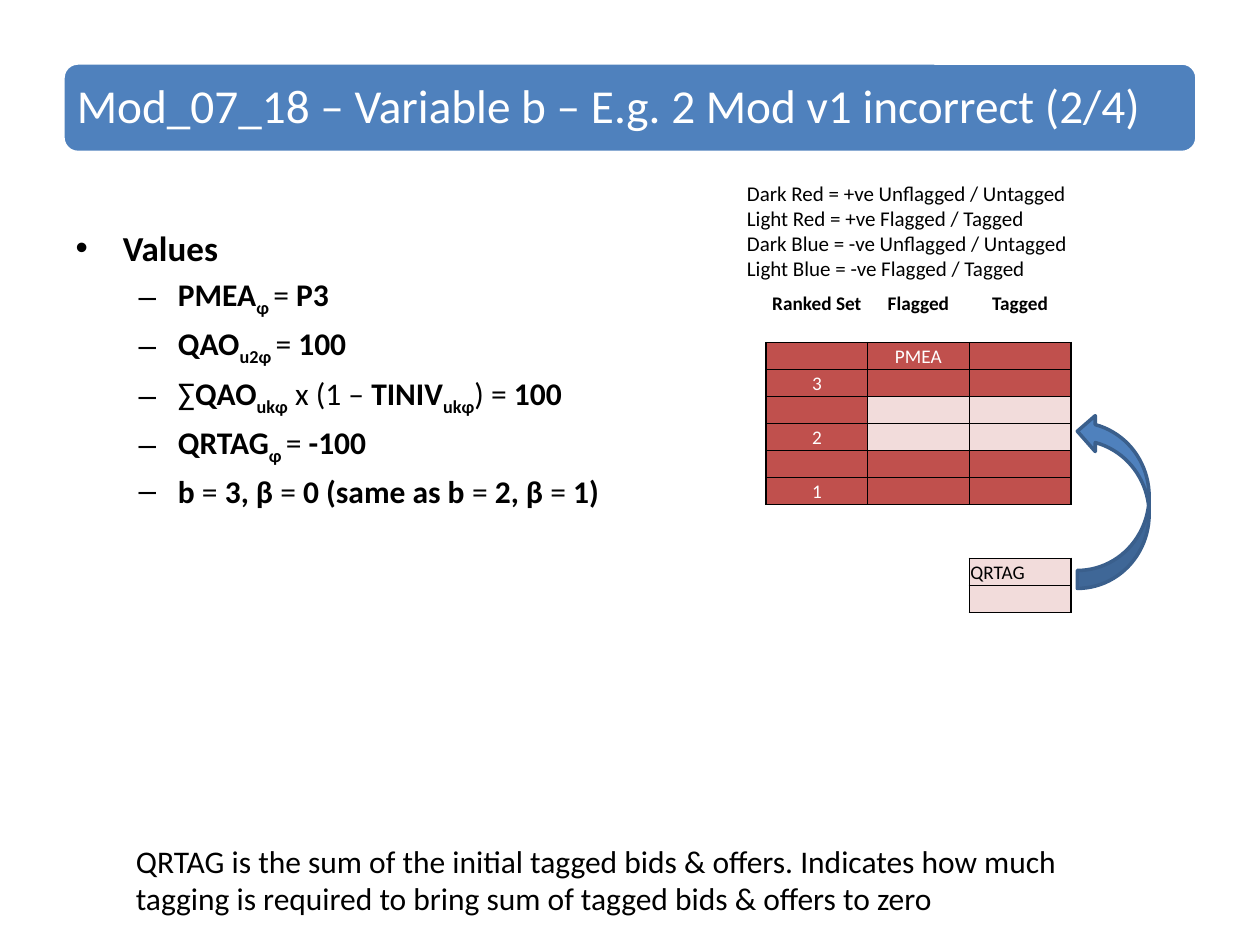
from lxml.etree import SubElement
from pptx import Presentation
from pptx.dml.color import RGBColor
from pptx.enum.shapes import MSO_SHAPE
from pptx.enum.text import MSO_ANCHOR, MSO_AUTO_SIZE, PP_ALIGN
from pptx.oxml.ns import qn
from pptx.util import Inches, Pt

FONT = "Calibri"
BLACK = RGBColor(0, 0, 0)
WHITE = RGBColor(0xFF, 0xFF, 0xFF)
BLUE = RGBColor(0x4F, 0x81, 0xBD)
DARK_BLUE = RGBColor(0x3A, 0x5F, 0x8C)
DARK_RED = RGBColor(0xC0, 0x50, 0x4D)
LIGHT_RED = RGBColor(0xF2, 0xDC, 0xDB)

NO_STYLE = "{2D5ABB26-0587-4C30-8999-92F81FD0307C}"
ROW_COUNT = 18
COLUMN_COUNT = 3
CELL_SIZE = 11

TITLE = "Mod_07_18 – Variable b – E.g. 2 Mod v1 incorrect (2/4)"
VALUES = [
    [("PMEA", "bold"), ("φ ", "sub"), ("= ", "plain"), ("P3", "bold")],
    [("QAO", "bold"), ("u2φ ", "sub"), ("= ", "plain"), ("100", "bold")],
    [("∑", "plain"), ("QAO", "bold"), ("ukφ", "sub"), (" x (1 – ", "plain"),
     ("TINIV", "bold"), ("ukφ", "sub"), (") = ", "plain"), ("100", "bold")],
    [("QRTAG", "bold"), ("φ ", "sub"), ("= ", "plain"), ("-100", "bold")],
    [("b ", "bold"), ("= ", "plain"), ("3, β ", "bold"), ("=", "plain"),
     (" 0 (same as b ", "bold"), ("= ", "plain"), ("2, β ", "bold"),
     ("=", "plain"), (" 1)", "bold")],
]
LEGEND = [
    "Dark Red = +ve Unflagged / Untagged",
    "Light Red = +ve Flagged / Tagged",
    "Dark Blue = -ve Unflagged / Untagged",
    "Light Blue = -ve Flagged / Tagged",
]
NOTE = ("QRTAG is the sum of the initial tagged bids & offers. Indicates how much "
        "tagging is required to bring sum of tagged bids & offers to zero")

BLOCKS = {
    (2, 0): DARK_RED, (2, 1): DARK_RED, (2, 2): DARK_RED,
    (4, 0): DARK_RED, (4, 1): LIGHT_RED, (4, 2): LIGHT_RED,
    (6, 0): DARK_RED, (6, 1): DARK_RED, (6, 2): DARK_RED,
    (10, 2): LIGHT_RED,
}
HEADINGS = ["Ranked Set", "Flagged", "Tagged"]
LABELS = {(2, 1): "PMEA", (3, 0): "3", (5, 0): "2", (7, 0): "1"}


def place(shape, left, top, width, height):
    shape.left, shape.top = Inches(left), Inches(top)
    shape.width, shape.height = Inches(width), Inches(height)


def format_span(span, size, color=BLACK, bold=False):
    span.font.name = FONT
    span.font.size = Pt(size)
    span.font.color.rgb = color
    span.font.bold = bold


def add_shape(page, kind, left, top, width, height, line_color):
    shape = page.shapes.add_shape(
        kind, Inches(left), Inches(top), Inches(width), Inches(height))
    shape.shadow.inherit = False
    shape.fill.solid()
    shape.fill.fore_color.rgb = BLUE
    shape.line.color.rgb = line_color
    shape.line.width = Pt(2)
    return shape


def add_text(page, left, top, width, height, lines, size):
    box = page.shapes.add_textbox(
        Inches(left), Inches(top), Inches(width), Inches(height))
    frame = box.text_frame
    frame.word_wrap = True
    frame.auto_size = MSO_AUTO_SIZE.SHAPE_TO_FIT_TEXT
    frame.text = "\n".join(lines)
    for para in frame.paragraphs:
        format_span(para.runs[0], size)


def add_title(page):
    bounds = (0.5, 0.5, 9, 0.71)
    bar = add_shape(page, MSO_SHAPE.ROUNDED_RECTANGLE, *bounds, WHITE)
    title = page.shapes.title
    bar.element.addnext(title.element)
    place(title, *bounds)
    frame = title.text_frame
    frame.text = TITLE
    frame.auto_size = MSO_AUTO_SIZE.NONE
    frame.vertical_anchor = MSO_ANCHOR.MIDDLE
    frame.margin_left = frame.margin_right = Inches(0.11)
    frame.margin_top = frame.margin_bottom = Inches(0.11)
    para = frame.paragraphs[0]
    para.alignment = PP_ALIGN.LEFT
    para.line_spacing = 0.9
    format_span(para.runs[0], 27, WHITE)


def add_values(page):
    body = page.placeholders[1]
    place(body, 0.5, 1.75, 5.6, 4.95)
    frame = body.text_frame
    frame.text = "Values"
    format_span(frame.paragraphs[0].runs[0], 20, bold=True)
    for pieces in VALUES:
        para = frame.add_paragraph()
        para.level = 1
        for text, style in pieces:
            span = para.add_run()
            span.text = text
            format_span(span, 18, bold=style != "plain")
            if style == "sub":
                span.font._element.set("baseline", "-25000")


def add_borders(cell, sides):
    properties = cell._tc.get_or_add_tcPr()
    for side in "LRTB":
        if side in sides:
            line = SubElement(properties, qn(f"a:ln{side}"), w=str(Pt(1)))
            fill = SubElement(line, qn("a:solidFill"))
            SubElement(fill, qn("a:srgbClr"), val=str(BLACK))


def fill_cell(cell, color):
    if color is None:
        cell.fill.background()
    else:
        cell.fill.solid()
        cell.fill.fore_color.rgb = color


def write_cell(cell, text="", color=BLACK, bold=False,
               align=PP_ALIGN.CENTER, anchor=MSO_ANCHOR.MIDDLE):
    cell.margin_left = cell.margin_right = cell.margin_top = Inches(0.01)
    cell.margin_bottom = 0
    cell.vertical_anchor = anchor
    cell.text = text
    para = cell.text_frame.paragraphs[0]
    para.alignment = align
    for span in para.runs:
        format_span(span, CELL_SIZE, color, bold)
    SubElement(para._p, qn("a:endParaRPr"), sz=str(CELL_SIZE * 100))


def add_ranking(page):
    frame = page.shapes.add_table(
        ROW_COUNT, COLUMN_COUNT,
        Inches(6.08), Inches(2.29), Inches(2.42), Inches(3.86))
    table = frame.table
    table.first_row = table.horz_banding = False
    table._tbl.tblPr.find(qn("a:tableStyleId")).text = NO_STYLE
    for row in range(ROW_COUNT):
        for column in range(COLUMN_COUNT):
            cell = table.cell(row, column)
            upper = (row, column) in BLOCKS
            color = BLOCKS.get((row, column), BLOCKS.get((row - 1, column)))
            if color is not None:
                add_borders(cell, "LRT" if upper else "LRB")
            elif 8 <= row <= 11 or (column == 2 and 12 <= row <= 15):
                color = WHITE
            fill_cell(cell, color)
            if row == 0:
                write_cell(cell, HEADINGS[column], bold=True,
                           anchor=MSO_ANCHOR.BOTTOM)
            elif (row, column) == (10, 2):
                write_cell(cell, "QRTAG", align=PP_ALIGN.LEFT)
            else:
                write_cell(cell, LABELS.get((row, column), ""), WHITE)


def main():
    deck = Presentation()
    deck.slide_width, deck.slide_height = Inches(10), Inches(7.5)
    page = deck.slides.add_slide(deck.slide_layouts[1])
    add_values(page)
    add_ranking(page)
    add_title(page)
    add_text(page, 0.98, 6.63, 7.85, 0.71, [NOTE], 18)
    add_text(page, 5.83, 1.38, 3.21, 0.91, LEGEND, 12)
    arrow = add_shape(page, MSO_SHAPE.CURVED_RIGHT_ARROW,
                      8.55, 3.28, 0.57, 1.39, DARK_BLUE)
    arrow.rotation = 180
    deck.save("out.pptx")


if __name__ == "__main__":
    main()
